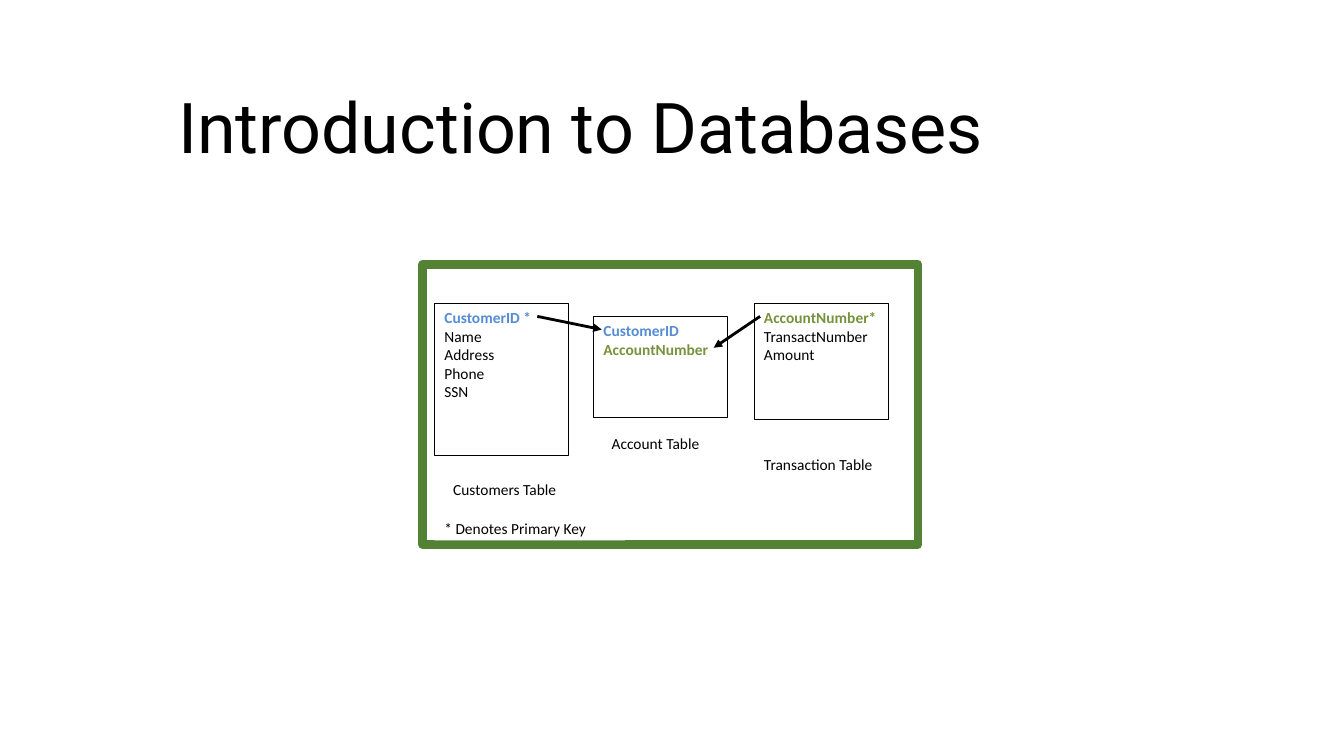
from dataclasses import dataclass

from lxml import etree
from pptx import Presentation
from pptx import util as u
from pptx.dml.color import RGBColor
from pptx.enum import shapes, text
from pptx.oxml import ns
from pptx.shapes.autoshape import Shape
from pptx.slide import Slide


@dataclass(frozen=True)
class Theme:
    black: str = "000000"
    white: str = "FFFFFF"
    frame: str = "548235"
    customer_key: str = "548DD4"
    account_key: str = "76923C"
    title_font: str = "Roboto"
    body_font: str = "Calibri"
    title_size: float = 50
    body_size: float = 11


THEME = Theme()


@dataclass(frozen=True)
class Area:
    left: float
    top: float
    width: float
    height: float

    def lengths(self) -> list[u.Length]:
        return [u.Pt(value) for value in (self.left, self.top, self.width, self.height)]


@dataclass(frozen=True)
class Field:
    name: str
    color: str = THEME.black
    bold: bool = False


@dataclass(frozen=True)
class Panel:
    area: Area
    fields: tuple[Field, ...] = ()
    border: str = ""
    border_width: float = 0.75


@dataclass(frozen=True)
class Arrow:
    start: tuple[float, float]
    end: tuple[float, float]


def key(name: str, color: str) -> Field:
    return Field(name, color, True)


def table(area: Area, *fields: Field) -> Panel:
    return Panel(area, fields, THEME.black)


def caption(left: float, top: float, width: float, label: str) -> Panel:
    return Panel(Area(left, top, width, 18.7), (Field(label),))


TITLE_AREA = Area(120.2, 35.3, 689, 115.9)
PANELS = (
    Panel(Area(301.7, 188.9, 354.2, 200), border=THEME.frame, border_width=6),
    table(Area(310.3, 216.6, 96, 108.7), key("CustomerID *", THEME.customer_key),
          Field("Name"), Field("Address"), Field("Phone"), Field("SSN")),
    table(Area(423.9, 226, 96, 72), key("CustomerID", THEME.customer_key),
          key("AccountNumber", THEME.account_key)),
    table(Area(538.6, 216.6, 96, 82.8), key("AccountNumber*", THEME.account_key),
          Field("TransactNumber"), Field("Amount")),
    caption(316.6, 339.3, 90, "Customers Table"),
    caption(429.8, 306.5, 90, "Account Table"),
    caption(538.6, 321.8, 96, "Transaction Table"),
    caption(310.3, 367.4, 136.1, "* Denotes Primary Key"),
)
ARROWS = (
    Arrow((383.8, 226), (429.8, 235.4)),
    Arrow((542.9, 226), (509.8, 248.4)),
)


def add_title(page: Slide) -> None:
    box = page.shapes.add_textbox(*TITLE_AREA.lengths())
    frame = box.text_frame
    frame.word_wrap = True
    frame.vertical_anchor = text.MSO_ANCHOR.MIDDLE
    frame.text = "Introduction to Databases"
    para = frame.paragraphs[0]
    para.line_spacing = 0.9
    font = para.runs[0].font
    font.name, font.size = THEME.title_font, u.Pt(THEME.title_size)
    font.color.rgb = RGBColor.from_string(THEME.black)


def write_fields(box: Shape, fields: tuple[Field, ...]) -> None:
    frame = box.text_frame
    frame.word_wrap = True
    frame.vertical_anchor = text.MSO_ANCHOR.TOP
    frame.text = "\n".join(field.name for field in fields)
    for para, field in zip(frame.paragraphs, fields):
        para.alignment = text.PP_ALIGN.LEFT
        for span in para.runs:
            font = span.font
            font.name, font.size = THEME.body_font, u.Pt(THEME.body_size)
            font.bold = field.bold
            font.color.rgb = RGBColor.from_string(field.color)


def add_panel(page: Slide, panel: Panel) -> None:
    box = page.shapes.add_shape(shapes.MSO_SHAPE.RECTANGLE, *panel.area.lengths())
    box.shadow.inherit = False
    box.fill.solid()
    box.fill.fore_color.rgb = RGBColor.from_string(THEME.white)
    if panel.border:
        box.line.color.rgb = RGBColor.from_string(panel.border)
        box.line.width = u.Pt(panel.border_width)
    else:
        box.line.fill.background()
    if panel.fields:
        write_fields(box, panel.fields)


def add_arrow(page: Slide, arrow: Arrow) -> None:
    ends = [u.Pt(value) for value in arrow.start + arrow.end]
    connector = page.shapes.add_connector(shapes.MSO_CONNECTOR.STRAIGHT, *ends)
    connector.line.color.rgb = RGBColor.from_string(THEME.black)
    connector.line.width = u.Pt(2)
    properties = connector._element.spPr
    line = properties.find(ns.qn("a:ln"))
    etree.SubElement(line, ns.qn("a:tailEnd"), type="triangle")
    etree.SubElement(properties, ns.qn("a:effectLst"))


def main() -> None:
    deck = Presentation()
    deck.slide_width, deck.slide_height = u.Pt(960), u.Pt(540)
    page = deck.slides.add_slide(deck.slide_layouts[6])
    add_title(page)
    for panel in PANELS:
        add_panel(page, panel)
    for arrow in ARROWS:
        add_arrow(page, arrow)
    deck.save("out.pptx")


if __name__ == "__main__":
    main()
